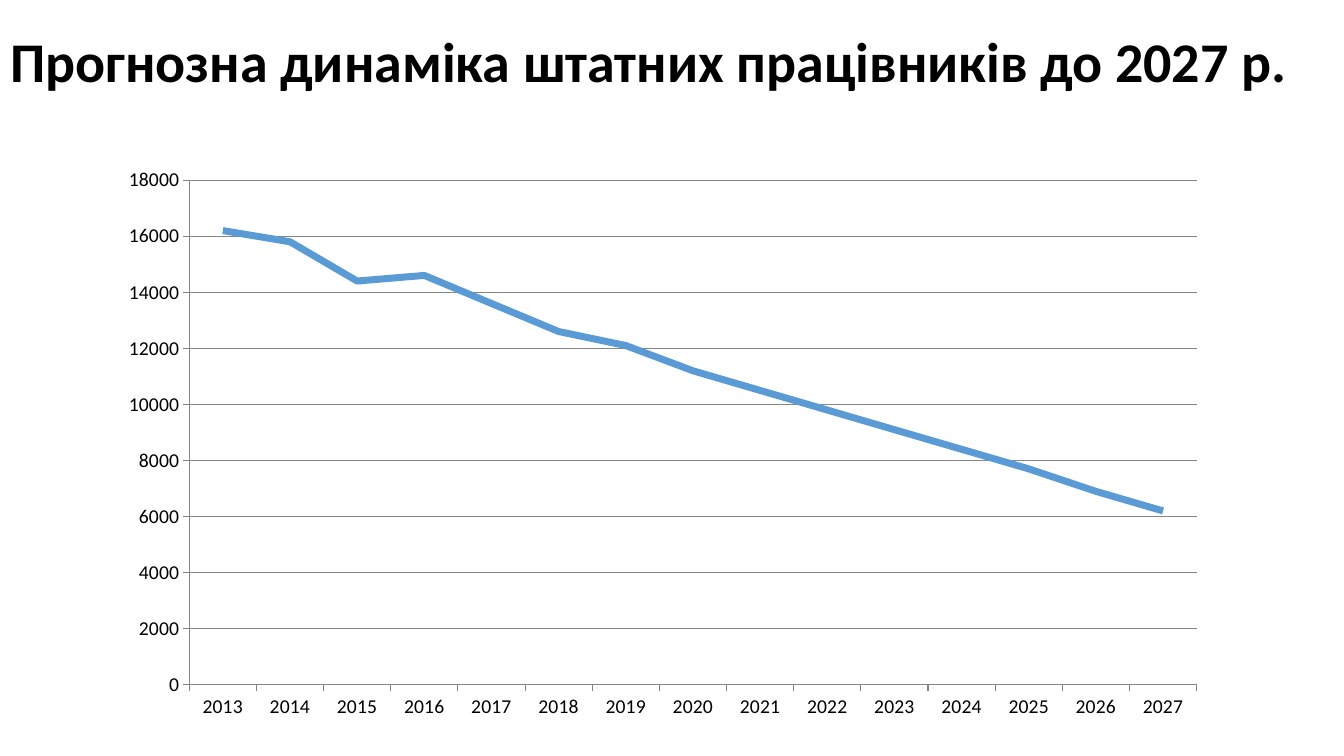
from dataclasses import dataclass

from lxml.etree import SubElement
from pptx import Presentation
from pptx.chart.data import CategoryChartData
from pptx.dml.color import RGBColor
from pptx.enum.chart import XL_CHART_TYPE as ChartType, XL_TICK_MARK as Tick
from pptx.enum.text import MSO_ANCHOR as Anchor, MSO_AUTO_SIZE as AutoSize, PP_ALIGN as Align
from pptx.oxml.ns import qn
from pptx.util import Emu, Pt

PX_PER_INCH = 100.8


@dataclass(frozen=True)
class Theme:
    font: str = "Calibri"
    ink: RGBColor = RGBColor(0x00, 0x00, 0x00)
    grid: RGBColor = RGBColor(0x86, 0x86, 0x86)
    trend: RGBColor = RGBColor(0x5B, 0x9B, 0xD5)
    title_size: Pt = Pt(40)
    chart_size: Pt = Pt(14)
    trend_width: Pt = Pt(5)
    grid_width: Pt = Pt(0.75)


THEME = Theme()
HEADLINE = "Прогнозна динаміка штатних працівників до 2027 р."
YEARS = [str(year) for year in range(2013, 2028)]
STAFF = [16200, 15800, 14400, 14600, 13600, 12600, 12100, 11200,
         10500, 9800, 9100, 8400, 7700, 6900, 6200]


def px(length):
    return Emu(round(length * 914400 / PX_PER_INCH))


def style_font(font, size, bold=False):
    font.name = THEME.font
    font.size = size
    font.bold = bold
    font.color.rgb = THEME.ink


def style_line(line, color, width):
    line.color.rgb = color
    line.width = width


def add_headline(slide, box):
    headline = slide.shapes.title
    headline.left, headline.top, headline.width, headline.height = map(px, box)
    frame = headline.text_frame
    frame.word_wrap = True
    frame.auto_size = AutoSize.SHAPE_TO_FIT_TEXT
    frame.vertical_anchor = Anchor.TOP
    paragraph = frame.paragraphs[0]
    paragraph.alignment = Align.LEFT
    run = paragraph.add_run()
    run.text = HEADLINE
    style_font(run.font, THEME.title_size, bold=True)


def place_plot(chart, box, margins):
    _, _, width, height = box
    left, top, right, bottom = margins
    fractions = {
        "x": left / width,
        "y": top / height,
        "w": (width - left - right) / width,
        "h": (height - top - bottom) / height,
    }
    plot_area = chart.plots[0]._element.getparent()
    for old_layout in plot_area.findall(qn("c:layout")):
        plot_area.remove(old_layout)
    layout = SubElement(plot_area, qn("c:layout"))
    plot_area.insert(0, layout)
    manual = SubElement(layout, qn("c:manualLayout"))
    settings = {"layoutTarget": "inner", "xMode": "edge", "yMode": "edge"}
    settings.update({side: f"{share:.3f}" for side, share in fractions.items()})
    for tag, value in settings.items():
        SubElement(manual, qn(f"c:{tag}")).set("val", value)


def add_staff_chart(slide, box):
    data = CategoryChartData()
    data.categories = YEARS
    data.add_series("Series 1", STAFF)
    chart = slide.shapes.add_chart(ChartType.LINE, *map(px, box), data).chart
    chart.has_legend = False
    chart.has_title = False
    style_font(chart.font, THEME.chart_size)
    place_plot(chart, box, margins=(82, 24, 23, 46))

    plot = chart.plots[0]
    plot.vary_by_categories = False
    staff = plot.series[0]
    staff.smooth = False
    style_line(staff.format.line, THEME.trend, THEME.trend_width)

    years, headcount = chart.category_axis, chart.value_axis
    for axis in (years, headcount):
        axis.major_tick_mark = Tick.OUTSIDE
        axis.minor_tick_mark = Tick.NONE
        style_line(axis.format.line, THEME.grid, THEME.grid_width)
    years.has_major_gridlines = False
    headcount.has_major_gridlines = True
    style_line(headcount.major_gridlines.format.line, THEME.grid, THEME.grid_width)
    headcount.minimum_scale = 0
    headcount.maximum_scale = 18000
    headcount.major_unit = 2000


def main():
    deck = Presentation()
    deck.slide_width, deck.slide_height = px(1344), px(756)
    slide = deck.slides.add_slide(deck.slide_layouts[5])
    add_staff_chart(slide, (107, 156, 1112, 575))
    add_headline(slide, (0, 21, 1344, 78))
    deck.save("out.pptx")


if __name__ == "__main__":
    main()
